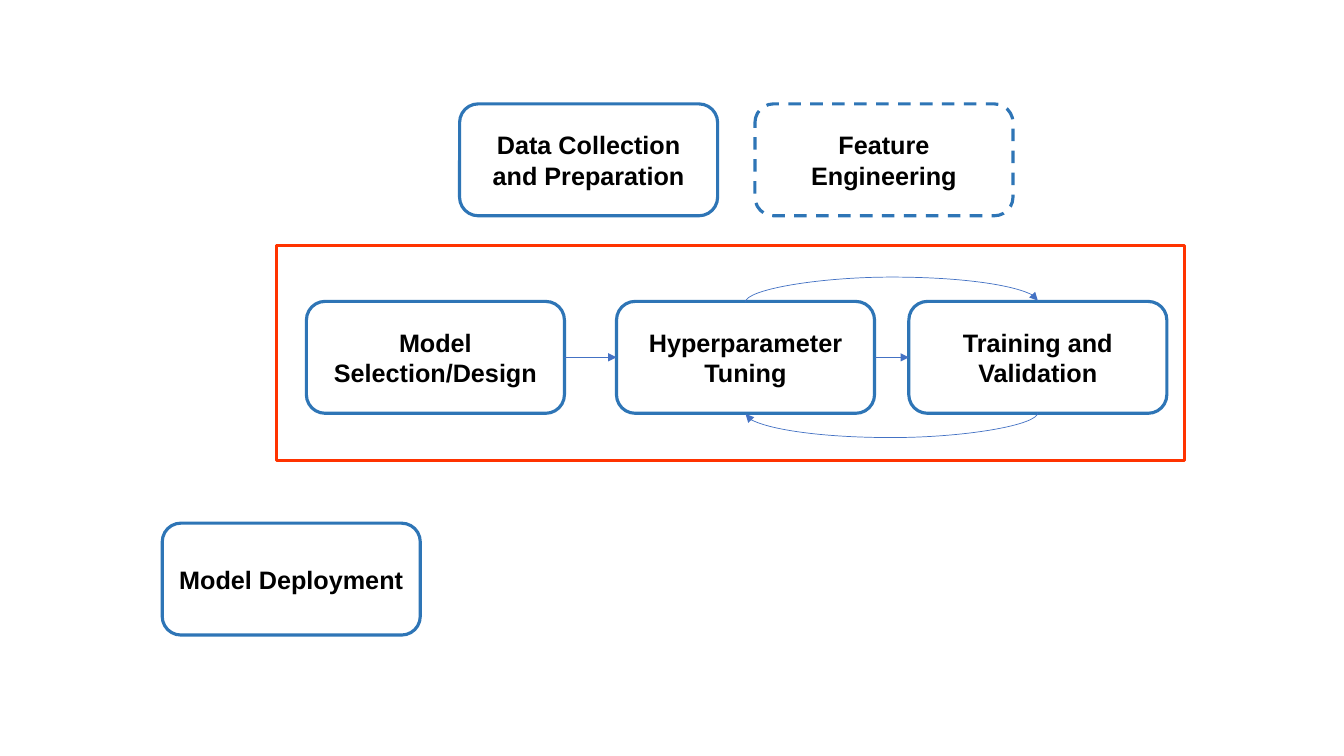
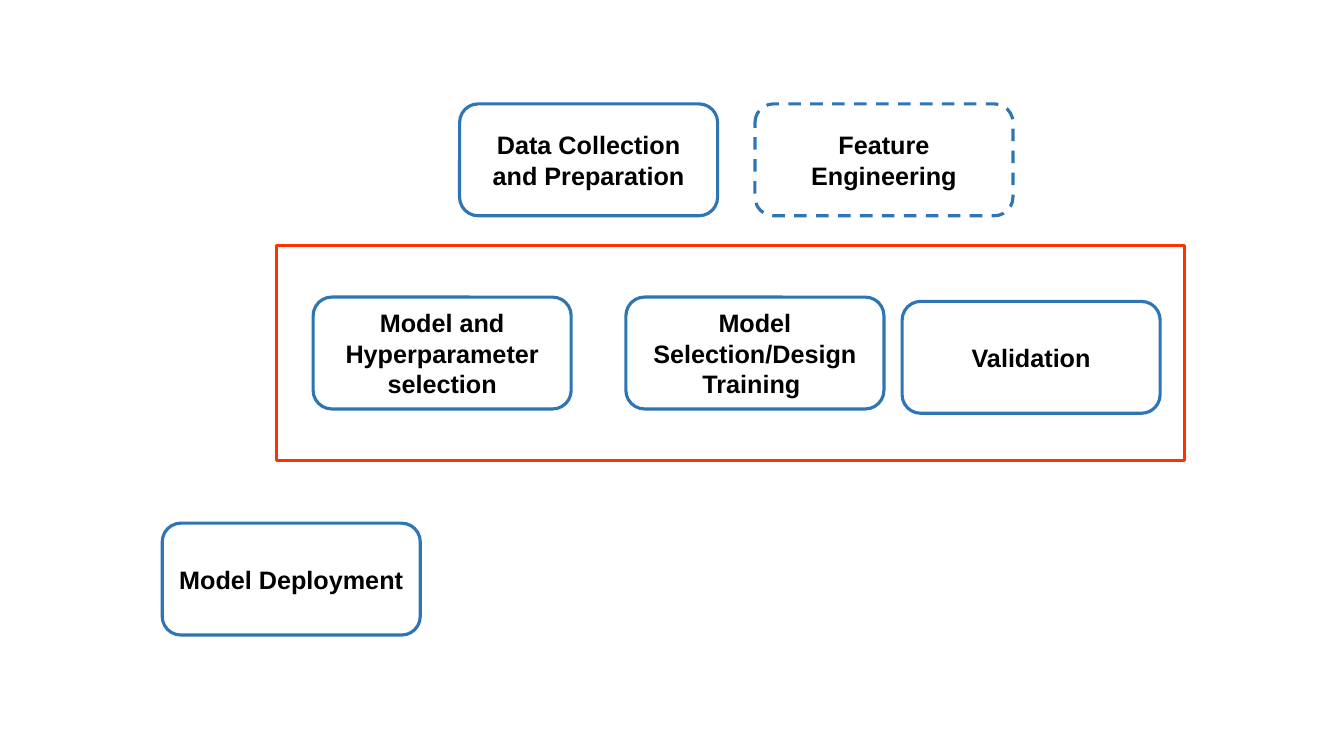
from dataclasses import dataclass

from lxml import etree
from pptx import Presentation
from pptx.dml.color import RGBColor
from pptx.enum import dml, shapes, text
from pptx.oxml import ns
from pptx.util import Pt


@dataclass(frozen=True)
class Theme:
    box_line: RGBColor = RGBColor(0x2E, 0x75, 0xB6)
    frame_line: RGBColor = RGBColor(0xFF, 0x33, 0x00)
    arrow: RGBColor = RGBColor(0x44, 0x72, 0xC4)
    ink: RGBColor = RGBColor(0, 0, 0)
    font: str = "Arial"
    text_size: float = 18
    border: float = 2.25
    arrow_width: float = 0.5


THEME = Theme()
SLIDE_SIZE = (960, 540)
BOX_SIZE = (184.3, 79.9)
FRAME = (197.3, 175.7, 648.7, 153.4)
BULGE = 18
TOP, LEFT, BOTTOM, RIGHT = range(4)

# Content: label, left, top, dashed
SHARED_BOXES = [
    ("Data Collection and Preparation", 328.3, 74.2, False),
    ("Feature Engineering", 539.3, 74.2, True),
    ("Model Deployment", 115.9, 373.7, False),
]
SLIDES = [
    {
        "steps": [
            ("Model Selection/Design", 218.9, 215.3, False),
            ("Hyperparameter Tuning", 440.4, 215.3, False),
            ("Training and Validation", 649.2, 215.3, False),
        ],
        "straight": [(0, 1), (1, 2)],
        "curved": [(2, 1, BOTTOM), (1, 2, TOP)],
    },
    {
        "steps": [
            ("Model and Hyperparameter selection", 223.7, 212.2, False),
            ("Model Selection/Design Training ", 447.1, 212.2, False),
            ("Validation", 644.4, 215.3, False),
        ],
        "straight": [],
        "curved": [],
    },
]


# Shapes
def add_outline(slide, kind, bounds, color):
    shape = slide.shapes.add_shape(kind, *map(Pt, bounds))
    shape.shadow.inherit = False
    shape.fill.background()
    shape.line.color.rgb = color
    shape.line.width = Pt(THEME.border)
    return shape


def add_box(slide, label, left, top, dashed):
    box = add_outline(slide, shapes.MSO_SHAPE.ROUNDED_RECTANGLE,
                      (left, top, *BOX_SIZE), THEME.box_line)
    if dashed:
        box.line.dash_style = dml.MSO_LINE.DASH
    frame = box.text_frame
    frame.word_wrap = True
    frame.vertical_anchor = text.MSO_ANCHOR.MIDDLE
    paragraph = frame.paragraphs[0]
    paragraph.alignment = text.PP_ALIGN.CENTER
    run = paragraph.add_run()
    run.text = label
    run.font.name = THEME.font
    run.font.size = Pt(THEME.text_size)
    run.font.bold = True
    run.font.color.rgb = THEME.ink
    return box


# Arrows
def add_arrow(slide, kind, start, start_side, end, end_side):
    arrow = slide.shapes.add_connector(kind, 0, 0, 0, 0)
    arrow.begin_connect(start, start_side)
    arrow.end_connect(end, end_side)
    arrow.line.color.rgb = THEME.arrow
    arrow.line.width = Pt(THEME.arrow_width)
    properties = arrow._element.spPr
    line = properties.find(ns.qn("a:ln"))
    etree.SubElement(line, ns.qn("a:tailEnd"), type="triangle")
    etree.SubElement(properties, ns.qn("a:effectLst"))
    return arrow


def add_curve(slide, start, end, side):
    """Loop between equal sides: a thin box turned by 90 degrees."""
    arrow = add_arrow(slide, shapes.MSO_CONNECTOR.CURVE, start, side, end, side)
    thickness = Pt(1)
    span = abs(end.left - start.left)
    center_x = (start.left + end.left + start.width) // 2
    center_y = start.top + (start.height if side == BOTTOM else 0)
    arrow.left, arrow.top = center_x - thickness // 2, center_y - span // 2
    arrow.width, arrow.height = thickness, span

    properties = arrow._element.spPr
    transform = properties.find(ns.qn("a:xfrm"))
    transform.set("rot", "5400000")
    for flip in ("flipH", "flipV"):
        transform.set(flip, "1" if side == TOP else "0")
    guides = properties.find(ns.qn("a:prstGeom")).find(ns.qn("a:avLst"))
    bulge_ratio = Pt(BULGE) * 100000 // thickness
    etree.SubElement(guides, ns.qn("a:gd"), name="adj1", fmla=f"val {bulge_ratio}")


# Slides
def build_slide(presentation, content):
    slide = presentation.slides.add_slide(presentation.slide_layouts[6])
    for box in SHARED_BOXES:
        add_box(slide, *box)
    add_outline(slide, shapes.MSO_SHAPE.RECTANGLE, FRAME, THEME.frame_line)
    steps = [add_box(slide, *step) for step in content["steps"]]
    for start, end in content["straight"]:
        add_arrow(slide, shapes.MSO_CONNECTOR.STRAIGHT,
                  steps[start], RIGHT, steps[end], LEFT)
    for start, end, side in content["curved"]:
        add_curve(slide, steps[start], steps[end], side)


def main():
    presentation = Presentation()
    presentation.slide_width, presentation.slide_height = map(Pt, SLIDE_SIZE)
    for content in SLIDES:
        build_slide(presentation, content)
    presentation.save("out.pptx")


if __name__ == "__main__":
    main()
